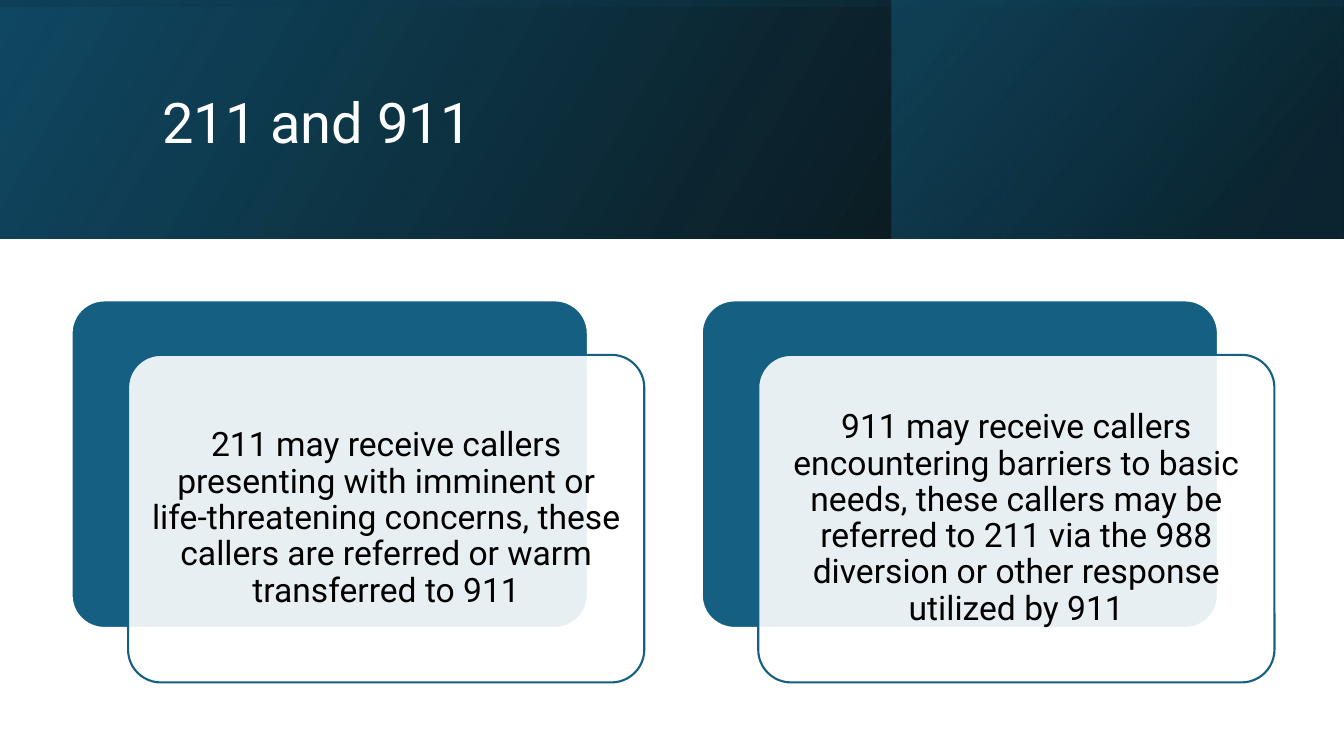
from pptx import Presentation
from pptx.dml.color import RGBColor
from pptx.enum.shapes import MSO_SHAPE
from pptx.enum.text import MSO_ANCHOR, MSO_AUTO_SIZE, PP_ALIGN
from pptx.oxml import parse_xml
from pptx.oxml.ns import nsdecls, qn
from pptx.util import Inches, Pt

COLORS = {"white": "FFFFFF", "black": "000000", "blue": "156082",
          "deep": "104862", "night": "0B3041"}
FONT = "Roboto"


def rgb(name):
    return RGBColor.from_string(COLORS[name])


def write_text(tf, text, size=24, color="black", align=PP_ALIGN.CENTER, inset=0.1):
    tf.word_wrap = True
    tf.auto_size = MSO_AUTO_SIZE.NONE
    tf.vertical_anchor = MSO_ANCHOR.MIDDLE
    tf.margin_left = tf.margin_right = Inches(inset)
    tf.margin_top = tf.margin_bottom = Inches(inset)
    p = tf.paragraphs[0]
    p.alignment = align
    p.line_spacing = 0.9
    r = p.add_run()
    r.text = text
    r.font.size = Pt(size)
    r.font.name = FONT
    r.font.color.rgb = rgb(color)


class SlideBuilder:
    def __init__(self, slide):
        self.slide = slide

    def shape(self, kind, left, top, width, height):
        sp = self.slide.shapes.add_shape(
            kind, Inches(left), Inches(top), Inches(width), Inches(height))
        sp.shadow.inherit = False
        return sp

    def band(self, left, top, width, height, stops, angle, rotation=0):
        """Mirrored gradient rectangle; stops are (position %, color, opacity %)."""
        sp = self.shape(MSO_SHAPE.RECTANGLE, left, top, width, height)
        sp.rotation = rotation
        sp.line.fill.background()
        sp.fill.background()
        spPr = sp._element.spPr
        spPr.find(qn("a:xfrm")).set("flipH", "1")
        gs = "".join(
            f'<a:gs pos="{pos * 1000}"><a:srgbClr val="{COLORS[color]}">'
            f'<a:alpha val="{opacity * 1000}"/></a:srgbClr></a:gs>'
            for pos, color, opacity in stops)
        grad = parse_xml(
            f'<a:gradFill {nsdecls("a")} rotWithShape="1"><a:gsLst>{gs}</a:gsLst>'
            f'<a:lin ang="{angle * 60000}" scaled="0"/></a:gradFill>')
        spPr.replace(spPr.find(qn("a:noFill")), grad)

    def title(self, text, left, top, width, height):
        sp = self.slide.shapes.title
        sp.left, sp.top = Inches(left), Inches(top)
        sp.width, sp.height = Inches(width), Inches(height)
        write_text(sp.text_frame, text, size=40, color="white", align=PP_ALIGN.LEFT)
        self.slide.shapes._spTree.append(sp._element)  # in front of the bands

    def panel(self, left, top, fill, line, opacity=100):
        sp = self.shape(MSO_SHAPE.ROUNDED_RECTANGLE, left, top, 5.12, 3.25)
        sp.adjustments[0] = 0.1
        sp.fill.solid()
        sp.fill.fore_color.rgb = rgb(fill)
        sp.line.color.rgb = rgb(line)
        sp.line.width = Pt(1.5)
        if opacity < 100:
            clr = sp._element.spPr.find(qn("a:solidFill"))[0]
            clr.append(parse_xml(f'<a:alpha {nsdecls("a")} val="{opacity * 1000}"/>'))
        return sp

    def card(self, text, left, top):
        self.panel(left, top, "blue", "white")
        front = self.panel(left + 0.56, top + 0.54, "white", "blue", opacity=90)
        write_text(front.text_frame, text)


def main():
    prs = Presentation()
    prs.slide_width, prs.slide_height = Inches(13.33), Inches(7.5)
    sb = SlideBuilder(prs.slides.add_slide(prs.slide_layouts[5]))

    sb.band(0, 0, 13.33, 2.37, [(0, "black", 96), (100, "deep", 100)], 330)
    sb.band(8.84, 0, 4.48, 2.37, [(19, "night", 68), (100, "blue", 48)], 320)
    sb.band(5.48, -5.48, 2.37, 13.33, [(23, "deep", 16), (99, "black", 45)], 350,
            rotation=270)
    sb.title("211 and 911", 1.51, 0.38, 10.63, 1.72)

    cards = [
        "211 may receive callers presenting with imminent or life-threatening "
        "concerns, these callers are referred or warm transferred to 911",
        "911 may receive callers encountering barriers to basic needs, these callers "
        "may be referred to 211 via the 988 diversion or other response utilized by 911",
    ]
    for i, text in enumerate(cards):
        sb.card(text, 0.71 + i * 6.25, 2.98)

    prs.save("out.pptx")


if __name__ == "__main__":
    main()
